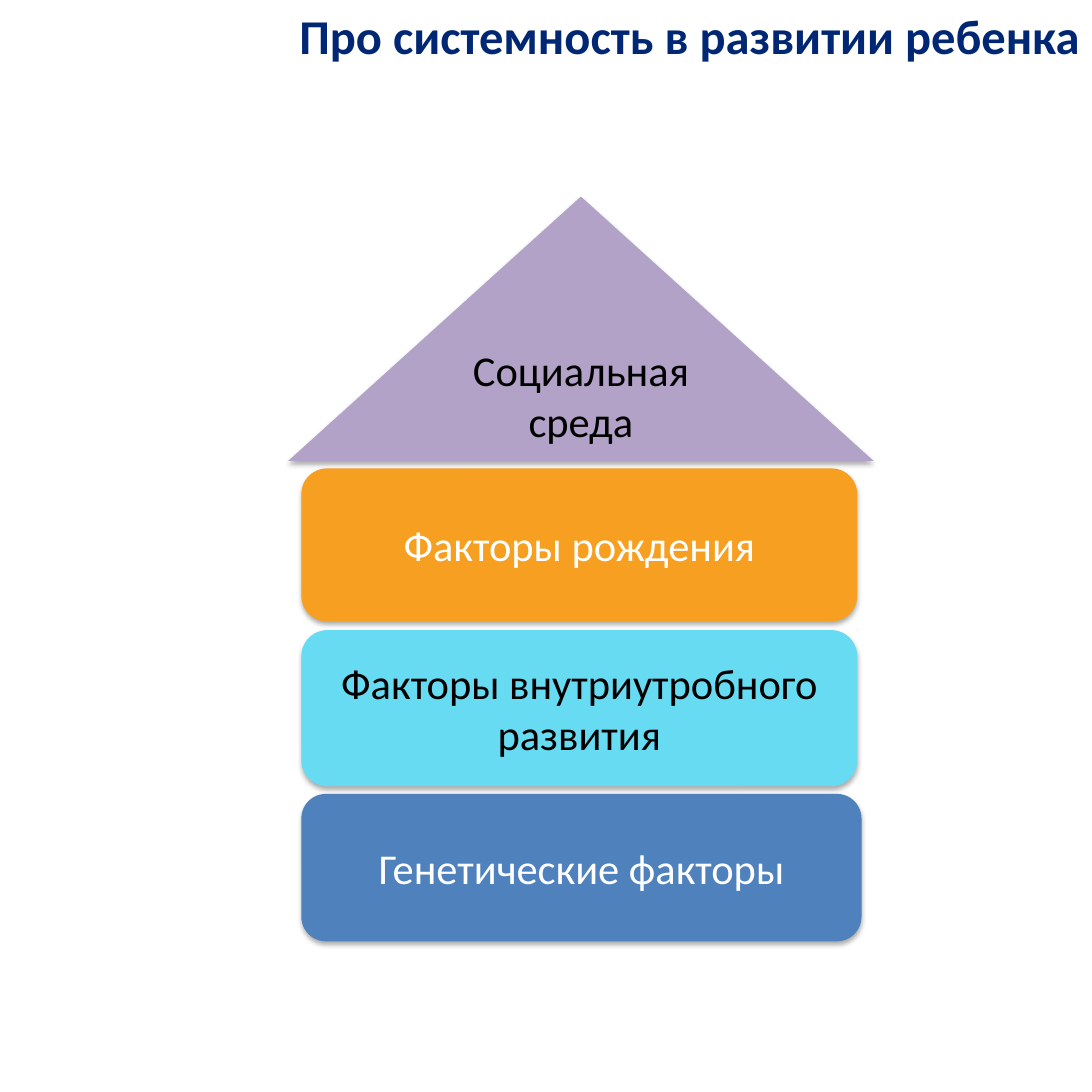
from dataclasses import dataclass

from lxml.etree import SubElement
from pptx import Presentation
from pptx.dml.color import RGBColor
from pptx.enum.shapes import MSO_SHAPE
from pptx.enum.text import MSO_ANCHOR, PP_ALIGN
from pptx.oxml.ns import qn
from pptx.util import Inches, Pt


@dataclass(frozen=True)
class Theme:
    font: str = "Calibri"
    title_size: int = 32
    label_size: int = 28
    navy: str = "002774"
    blue: str = "4F81BD"
    cyan: str = "66DBF2"
    orange: str = "F69F20"
    lilac: str = "B3A2C7"
    white: str = "FFFFFF"
    black: str = "000000"


def write_text(tf, text, *, font, size, color, bold=False):
    tf.word_wrap = True
    tf.vertical_anchor = MSO_ANCHOR.MIDDLE
    p = tf.paragraphs[0]
    p.alignment = PP_ALIGN.CENTER
    r = p.add_run()
    r.text = text
    r.font.name = font
    r.font.size = Pt(size)
    r.font.bold = bold
    r.font.color.rgb = RGBColor.from_string(color)


def add_soft_shadow(sp, color):
    """Put a short downward shadow of 32 % opacity under the shape."""
    sp.shadow.inherit = False
    effects = sp._element.spPr.find(qn("a:effectLst"))
    shadow = SubElement(effects, qn("a:outerShdw"), blurRad=str(Pt(3.5)),
                        dist=str(Pt(2.2)), dir="5400000", rotWithShape="0")
    clr = SubElement(shadow, qn("a:srgbClr"), val=color)
    SubElement(clr, qn("a:alpha"), val="32000")


class SlideBuilder:
    def __init__(self, slide, theme):
        self.slide = slide
        self.theme = theme

    def title(self, text, box):
        sp = self.slide.shapes.add_textbox(*map(Inches, box))
        write_text(sp.text_frame, text, font=self.theme.font,
                   size=self.theme.title_size, color=self.theme.navy, bold=True)

    def block(self, kind, text, box, fill, color):
        sp = self.slide.shapes.add_shape(kind, *map(Inches, box))
        sp.fill.solid()
        sp.fill.fore_color.rgb = RGBColor.from_string(fill)
        sp.line.fill.background()
        add_soft_shadow(sp, self.theme.black)
        write_text(sp.text_frame, text, font=self.theme.font,
                   size=self.theme.label_size, color=color)


def main():
    prs = Presentation()
    prs.slide_width = prs.slide_height = Inches(10)
    theme = Theme()
    s = SlideBuilder(prs.slides.add_slide(prs.slide_layouts[6]), theme)

    s.title("Про системность в развитии ребенка", (1.69, -0.28, 9.26, 1.21))

    floor_left = 2.76
    floors = [
        ("Генетические факторы", 7.27, 5.13, 1.35, theme.blue, theme.white),
        ("Факторы внутриутробного развития", 5.77, 5.09, 1.43, theme.cyan, theme.black),
        ("Факторы рождения", 4.29, 5.09, 1.4, theme.orange, theme.white),
    ]
    for text, top, width, height, fill, color in floors:
        s.block(MSO_SHAPE.ROUNDED_RECTANGLE, text,
                (floor_left, top, width, height), fill, color)

    s.block(MSO_SHAPE.ISOSCELES_TRIANGLE, "Социальная среда",
            (2.64, 1.8, 5.36, 2.42), theme.lilac, theme.black)

    prs.save("out.pptx")


if __name__ == "__main__":
    main()
